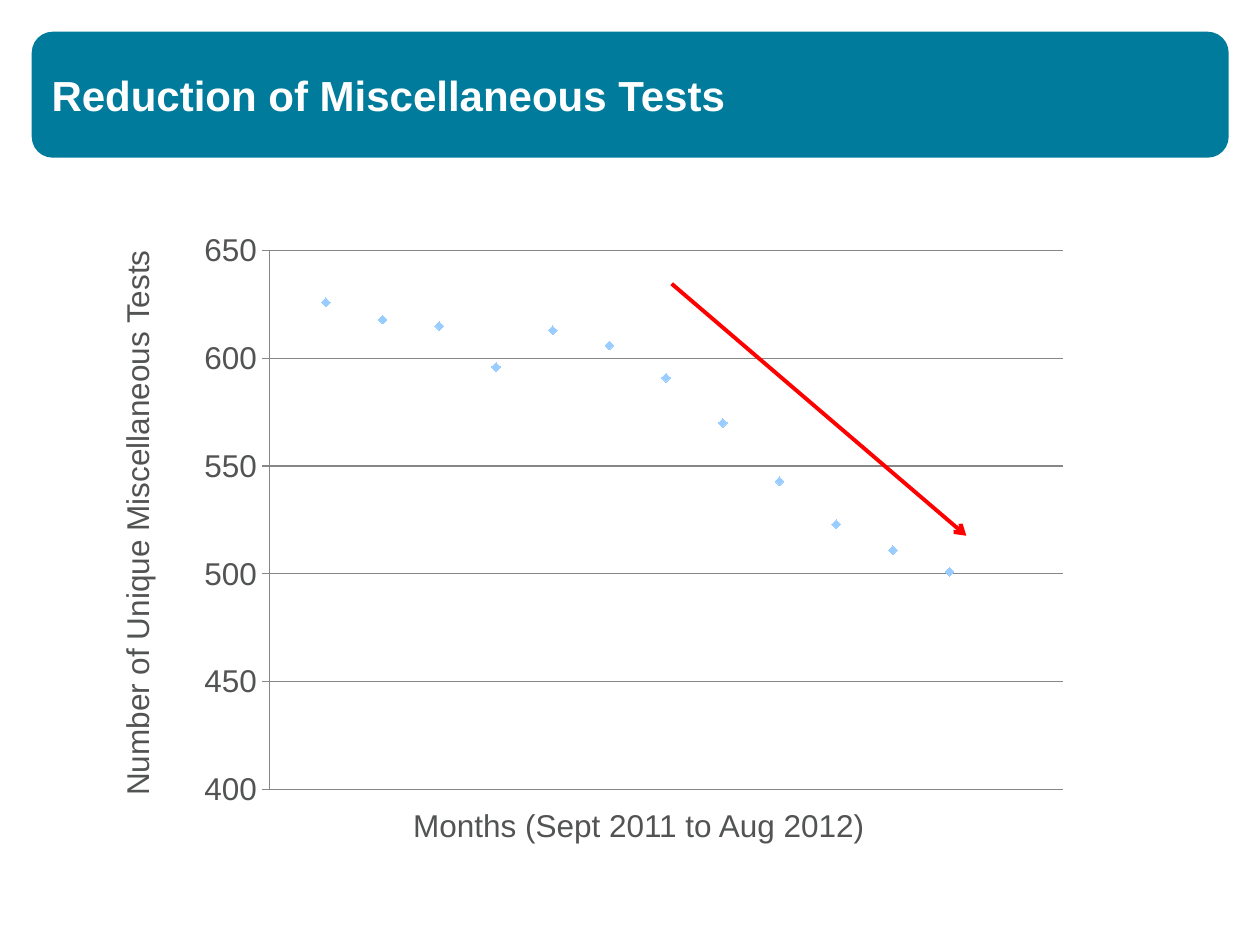
import pptx
import pptx.chart.data
import pptx.dml.color
import pptx.enum.chart
import pptx.enum.shapes
import pptx.enum.text
import pptx.oxml
import pptx.oxml.ns
import pptx.util
from pptx.util import Cm

FONT = "Arial"
COLORS = {
    "banner": "007B9B",
    "title": "FFFFFF",
    "text": "525353",
    "marker": "99CCFF",
    "grid": "868686",
    "arrow": "FF0000",
}
MONTHLY_TESTS = [626, 618, 615, 596, 613, 606, 591, 570, 543, 523, 511, 501]
TEXTS = [
    {"text": "Reduction of Miscellaneous Tests", "at": (0.79, 1.27, 23.5, 3.38),
     "size": 24, "bold": True, "color": "title", "wrap": True, "turn": 0},
    {"text": "Number of Unique Miscellaneous Tests", "at": (-3.05, 9.98, 11.61, 1.02),
     "size": 18, "bold": False, "color": "text", "wrap": False, "turn": 270},
    {"text": "Months (Sept 2011 to Aug 2012)", "at": (8.08, 16.13, 9.7, 1.02),
     "size": 18, "bold": False, "color": "text", "wrap": False, "turn": 0},
]
BANNER_AT = (0.64, 0.64, 24.13, 2.54)
CHART_AT = (3.81, 4.45, 17.98, 12.07)
PLOT_AREA = {"x": 0.09, "y": 0.05, "w": 0.89, "h": 0.9}
ARROW_ENDS = (13.54, 5.72, 19.48, 10.8)


def rgb(name):
    return pptx.dml.color.RGBColor.from_string(COLORS[name])


def lengths(values):
    return [Cm(value) for value in values]


def style_font(font, size, color, bold=False):
    font.name = FONT
    font.size = pptx.util.Pt(size)
    font.bold = bold
    font.color.rgb = rgb(color)


def style_line(line, color, width):
    line.color.rgb = rgb(color)
    line.width = pptx.util.Pt(width)


def add_banner(page):
    banner = page.shapes.add_shape(
        pptx.enum.shapes.MSO_SHAPE.ROUNDED_RECTANGLE, *lengths(BANNER_AT))
    banner.shadow.inherit = False
    banner.fill.solid()
    banner.fill.fore_color.rgb = rgb("banner")
    banner.line.fill.background()


def add_text(page, item):
    box = page.shapes.add_textbox(*lengths(item["at"]))
    box.rotation = item["turn"]
    frame = box.text_frame
    frame.text = item["text"]
    frame.word_wrap = item["wrap"]
    if not item["wrap"]:
        frame.auto_size = pptx.enum.text.MSO_AUTO_SIZE.SHAPE_TO_FIT_TEXT
    span = frame.paragraphs[0].runs[0]
    style_font(span.font, item["size"], item["color"], item["bold"])


def set_plot_area(chart):
    parts = "".join(f'<c:{key}Mode val="edge"/>' for key in "xy")
    parts += "".join(f'<c:{key} val="{value}"/>' for key, value in PLOT_AREA.items())
    layout = pptx.oxml.parse_xml(
        f'<c:layout {pptx.oxml.ns.nsdecls("c")}><c:manualLayout>'
        f'<c:layoutTarget val="inner"/>{parts}</c:manualLayout></c:layout>')
    plot_area = chart.plots[0]._element.getparent()
    for old in plot_area.findall(pptx.oxml.ns.qn("c:layout")):
        plot_area.remove(old)
    plot_area.insert(0, layout)


def add_scatter(page):
    data = pptx.chart.data.XyChartData()
    points = data.add_series("Series 1")
    for month, tests in enumerate(MONTHLY_TESTS, start=1):
        points.add_data_point(month, tests)
    chart = page.shapes.add_chart(
        pptx.enum.chart.XL_CHART_TYPE.XY_SCATTER, *lengths(CHART_AT), data).chart
    chart.has_legend = False
    chart.has_title = False
    style_font(chart.font, 18, "text")
    chart.plots[0].vary_by_categories = False
    set_plot_area(chart)

    months = chart.category_axis
    months.minimum_scale, months.maximum_scale = 0, 14
    months.has_major_gridlines = False
    months.visible = False

    tests = chart.value_axis
    tests.minimum_scale, tests.maximum_scale = 400, 650
    tests.major_unit = 50
    tests.has_major_gridlines = True
    tests.major_tick_mark = pptx.enum.chart.XL_TICK_MARK.OUTSIDE
    tests.minor_tick_mark = pptx.enum.chart.XL_TICK_MARK.NONE
    tests.tick_labels.number_format = "General"
    tests.tick_labels.number_format_is_linked = False
    style_line(tests.format.line, "grid", 0.75)
    style_line(tests.major_gridlines.format.line, "grid", 0.75)

    series = chart.plots[0].series[0]
    series.smooth = False
    series.format.line.fill.background()
    marker = series.marker
    marker.style = pptx.enum.chart.XL_MARKER_STYLE.DIAMOND
    marker.size = 5
    marker.format.fill.solid()
    marker.format.fill.fore_color.rgb = rgb("marker")
    marker.format.line.color.rgb = rgb("marker")


def add_arrow(page):
    arrow = page.shapes.add_connector(
        pptx.enum.shapes.MSO_CONNECTOR.STRAIGHT, *lengths(ARROW_ENDS))
    style_line(arrow.line, "arrow", 2.25)
    namespace = pptx.oxml.ns.nsdecls("a")
    arrow.line._get_or_add_ln().append(
        pptx.oxml.parse_xml(f'<a:tailEnd {namespace} type="arrow"/>'))
    arrow._element.spPr.append(pptx.oxml.parse_xml(f"<a:effectLst {namespace}/>"))


def main():
    deck = pptx.Presentation()
    deck.slide_width, deck.slide_height = Cm(25.4), Cm(19.05)
    page = deck.slides.add_slide(deck.slide_layouts[6])
    add_banner(page)
    add_scatter(page)
    for item in TEXTS:
        add_text(page, item)
    add_arrow(page)
    deck.save("out.pptx")


if __name__ == "__main__":
    main()
